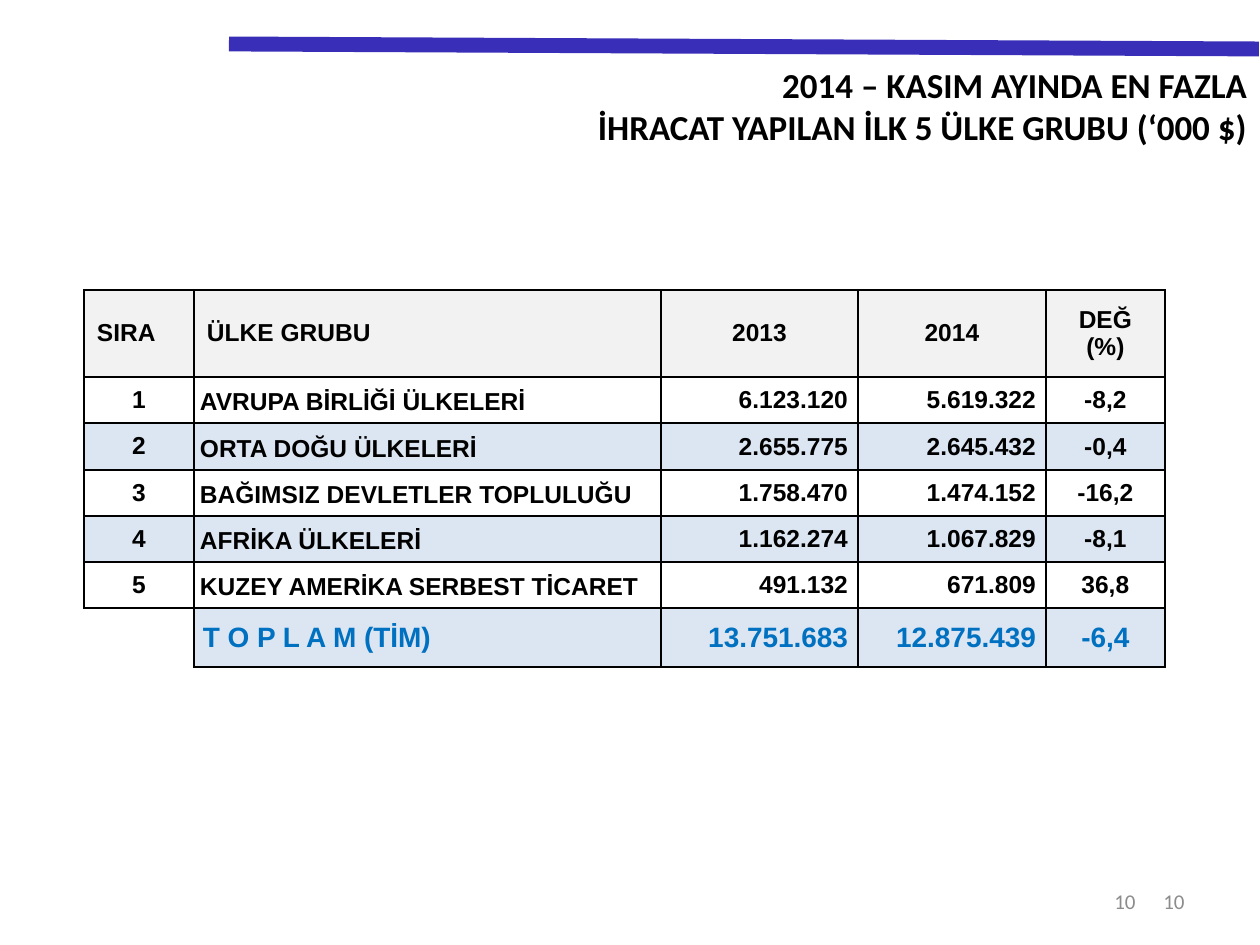
from lxml import etree
from pptx import Presentation
from pptx import util as u
from pptx.dml.color import RGBColor
from pptx.enum import shapes, text
from pptx.oxml.ns import qn

PX = 914400 / 126
LEFT, CENTER, RIGHT = text.PP_ALIGN.LEFT, text.PP_ALIGN.CENTER, text.PP_ALIGN.RIGHT


def px(length):
    return u.Emu(round(length * PX))


def color(value):
    return RGBColor.from_string(value)


presentation = Presentation()
presentation.slide_width, presentation.slide_height = px(1260), px(945)
slide = presentation.slides.add_slide(presentation.slide_layouts[5])

# Blue rule across the top
rule = slide.shapes.add_connector(
    shapes.MSO_CONNECTOR.STRAIGHT, px(229), px(44), px(1259), px(49))
rule.line.color.rgb = color("382EB8")
rule.line.width = u.Pt(8.5)
etree.SubElement(rule._element.spPr, qn("a:effectLst"))

# Title
title = slide.shapes.title
title.left, title.top, title.width, title.height = px(134), px(57), px(1126), px(97)
title.text_frame.text = "2014 – KASIM AYINDA EN FAZLA\nİHRACAT YAPILAN İLK 5 ÜLKE GRUBU (‘000 $)"
title.text_frame.vertical_anchor = text.MSO_ANCHOR.TOP
title.text_frame.auto_size = text.MSO_AUTO_SIZE.NONE
for paragraph in title.text_frame.paragraphs:
    paragraph.alignment = RIGHT
    paragraph.font.name = "Calibri"
    paragraph.font.size = u.Pt(20)
    paragraph.font.bold = True
    paragraph.font.color.rgb = color("000000")

# Page numbers
for left, width in ((903, 294), (883, 265)):
    number = slide.shapes.add_textbox(px(left), px(876), px(width), px(50))
    number.text_frame.word_wrap = True
    number.text_frame.vertical_anchor = text.MSO_ANCHOR.MIDDLE
    paragraph = number.text_frame.paragraphs[0]
    paragraph.text = "10"
    paragraph.alignment = RIGHT
    paragraph.font.name = "Calibri"
    paragraph.font.size = u.Pt(12)
    paragraph.font.color.rgb = color("8C8C8C")

# Export table
rows = [
    ("SIRA", "ÜLKE GRUBU", "2013", "2014", "DEĞ\n(%)"),
    ("1", "AVRUPA BİRLİĞİ ÜLKELERİ", "6.123.120", "5.619.322", "-8,2"),
    ("2", "ORTA DOĞU ÜLKELERİ", "2.655.775", "2.645.432", "-0,4"),
    ("3", "BAĞIMSIZ DEVLETLER TOPLULUĞU", "1.758.470", "1.474.152", "-16,2"),
    ("4", "AFRİKA ÜLKELERİ", "1.162.274", "1.067.829", "-8,1"),
    ("5", "KUZEY AMERİKA SERBEST TİCARET", "491.132", "671.809", "36,8"),
    ("", "T O P L A M (TİM)", "13.751.683", "12.875.439", "-6,4"),
]
widths = (110, 467, 197, 188, 119)
heights = (87, 46, 47, 46, 46, 46, 59)
header_alignments = (LEFT, LEFT, CENTER, CENTER, CENTER)
body_alignments = (CENTER, LEFT, RIGHT, RIGHT, CENTER)
# Left, top, right and bottom margins of the body cells, by column
body_margins = ((13, 6, 13, 6), (6, 0, 6, 0), (1, 1, 10, 0), (1, 1, 10, 0), (1, 1, 1, 0))
total_row = len(rows) - 1

table = slide.shapes.add_table(
    len(rows), len(widths), px(84), px(290), px(sum(widths)), px(sum(heights))).table
table.first_row = table.horz_banding = False
for column, width in zip(table.columns, widths):
    column.width = px(width)
for row, height in zip(table.rows, heights):
    row.height = px(height)

for r, values in enumerate(rows):
    for c, value in enumerate(values):
        cell = table.cell(r, c)
        is_blank = r == total_row and c == 0

        # Borders; the blank corner is open at the left and bottom
        properties = cell._tc.get_or_add_tcPr()
        for side in ("lnL", "lnR", "lnT", "lnB"):
            border = etree.SubElement(properties, qn(f"a:{side}"), w=str(u.Pt(1)))
            if is_blank and side in ("lnL", "lnB"):
                etree.SubElement(border, qn("a:noFill"))
            else:
                fill = etree.SubElement(border, qn("a:solidFill"))
                etree.SubElement(fill, qn("a:srgbClr"), val="000000")

        # Fill: grey header, blue on even rows
        if is_blank:
            cell.fill.background()
        else:
            cell.fill.solid()
            shade = "F2F2F2" if r == 0 else "DCE6F2" if r % 2 == 0 else "FFFFFF"
            cell.fill.fore_color.rgb = color(shade)

        # Text
        margins = body_margins[0] if r == 0 else body_margins[c]
        if r == total_row and c == 1:
            margins = (9, 1, 1, 0)
        (cell.margin_left, cell.margin_top,
         cell.margin_right, cell.margin_bottom) = map(px, margins)
        cell.vertical_anchor = text.MSO_ANCHOR.MIDDLE
        cell.text = value
        for paragraph in cell.text_frame.paragraphs:
            paragraph.alignment = (header_alignments if r == 0 else body_alignments)[c]
            if c == 1 and 0 < r < total_row:
                paragraph.line_spacing = 1.15
            paragraph.font.name = "Arial"
            paragraph.font.size = u.Pt(16 if r == total_row else 14)
            paragraph.font.bold = True
            paragraph.font.color.rgb = color("0070C0" if r == total_row else "000000")

presentation.save("out.pptx")
